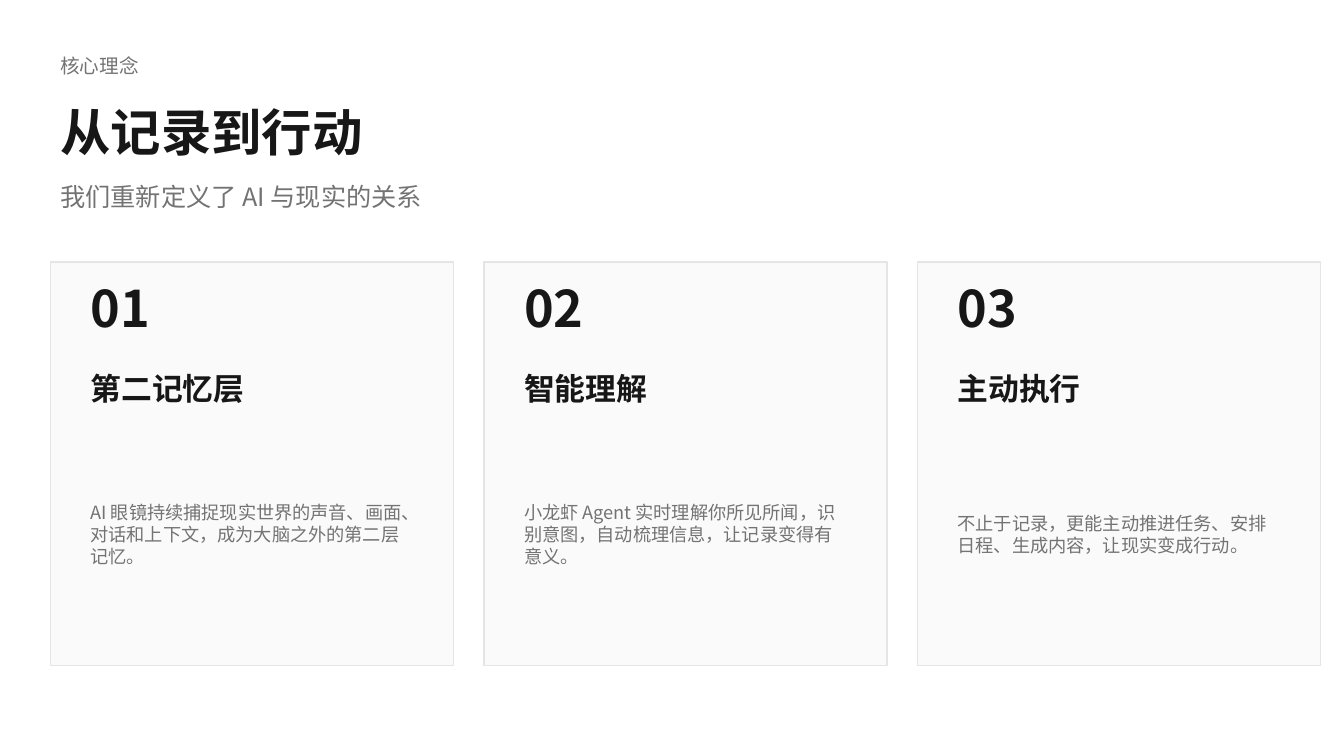
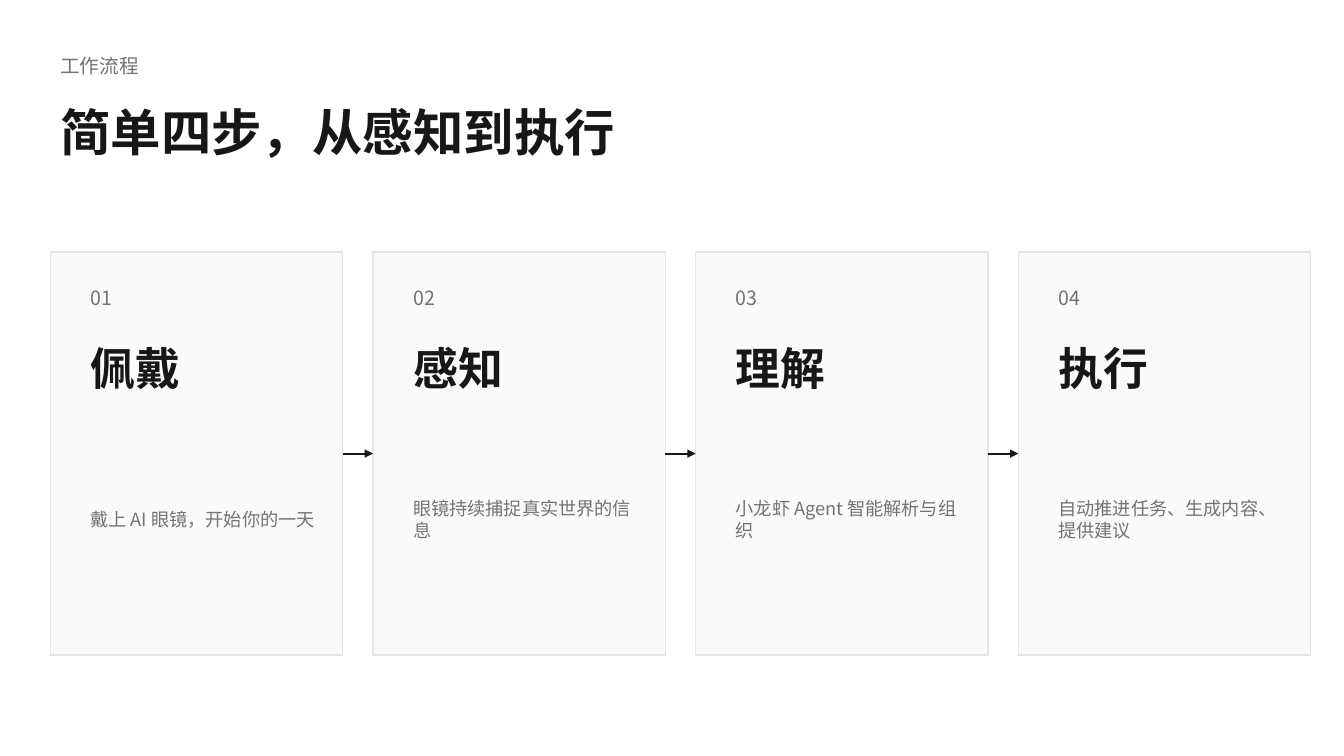
from itertools import pairwise

from lxml import etree
from pptx import Presentation
from pptx.dml.color import RGBColor
from pptx.enum.shapes import MSO_CONNECTOR, MSO_SHAPE
from pptx.enum.text import MSO_ANCHOR
from pptx.oxml.ns import qn
from pptx.util import Inches, Pt

COLORS = {"ink": "171717", "muted": "737373", "card": "FAFAFA", "border": "E5E5E5"}
FONT = "Noto Sans CJK SC"
MARGIN = 0.5
GAP = 0.3
PADDING = 0.3
CARD_HEIGHT = 4
RIGHT_SIDE, LEFT_SIDE = 3, 1

IDEAS = [
    ("01", "第二记忆层", "AI 眼镜持续捕捉现实世界的声音、画面、对话和上下文，成为大脑之外的第二层记忆。"),
    ("02", "智能理解", "小龙虾 Agent 实时理解你所见所闻，识别意图，自动梳理信息，让记录变得有意义。"),
    ("03", "主动执行", "不止于记录，更能主动推进任务、安排日程、生成内容，让现实变成行动。"),
]
STEPS = [
    ("01", "佩戴", "戴上 AI 眼镜，开始你的一天"),
    ("02", "感知", "眼镜持续捕捉真实世界的信息"),
    ("03", "理解", "小龙虾 Agent 智能解析与组织"),
    ("04", "执行", "自动推进任务、生成内容、提供建议"),
]


def add_text(page, left, top, width, height, text, size, color="muted", bold=False):
    box = page.shapes.add_textbox(Inches(left), Inches(top), Inches(width), Inches(height))
    frame = box.text_frame
    frame.word_wrap = True
    frame.vertical_anchor = MSO_ANCHOR.MIDDLE
    frame.text = text
    span = frame.paragraphs[0].runs[0]
    span.font.size = Pt(size)
    span.font.bold = bold
    span.font.name = FONT
    span.font.color.rgb = RGBColor.from_string(COLORS[color])
    # East Asian typeface for the Chinese characters
    etree.SubElement(span.font._element, qn("a:ea"), typeface=FONT)


def add_card(page, left, top, width):
    card = page.shapes.add_shape(
        MSO_SHAPE.RECTANGLE, Inches(left), Inches(top), Inches(width), Inches(CARD_HEIGHT))
    card.shadow.inherit = False
    card.fill.solid()
    card.fill.fore_color.rgb = RGBColor.from_string(COLORS["card"])
    card.line.color.rgb = RGBColor.from_string(COLORS["border"])
    card.line.width = Pt(1)
    return card


def add_arrow(page, start_card, end_card):
    arrow = page.shapes.add_connector(MSO_CONNECTOR.STRAIGHT, 0, 0, 0, 0)
    arrow.begin_connect(start_card, RIGHT_SIDE)
    arrow.end_connect(end_card, LEFT_SIDE)
    arrow.line.color.rgb = RGBColor.from_string(COLORS["ink"])
    arrow.line.width = Pt(1.5)
    # Arrowhead, and no inherited shadow
    etree.SubElement(arrow.line._get_or_add_ln(), qn("a:tailEnd"), type="triangle")
    etree.SubElement(arrow._element.spPr, qn("a:effectLst"))


def add_heading(page, label, title, subtitle=None):
    add_text(page, MARGIN, 0.4, 12, 0.5, label, 14)
    add_text(page, MARGIN, 0.9, 12, 0.8, title, 36, "ink", True)
    if subtitle:
        add_text(page, MARGIN, 1.7, 12, 0.5, subtitle, 18)


def add_idea_card(page, left, top, width, number, name, detail):
    add_card(page, left, top, width)
    inner_left, inner_width = left + PADDING, width - 2 * PADDING
    add_text(page, inner_left, top + 0.2, 1, 0.5, number, 36, "ink", True)
    add_text(page, inner_left, top + 1, inner_width, 0.5, name, 22, "ink", True)
    add_text(page, inner_left, top + 1.7, inner_width, 2, detail, 13)


def add_step_card(page, left, top, width, number, name, detail):
    card = add_card(page, left, top, width)
    inner_left, inner_width = left + PADDING, width - 0.4
    add_text(page, inner_left, top + 0.2, inner_width, 0.5, number, 14)
    add_text(page, inner_left, top + 0.8, inner_width, 0.7, name, 32, "ink", True)
    add_text(page, inner_left, top + 1.9, inner_width, 1.5, detail, 13)
    return card


def add_ideas_slide(deck):
    page = deck.slides.add_slide(deck.slide_layouts[6])
    add_heading(page, "核心理念", "从记录到行动", "我们重新定义了 AI 与现实的关系")
    width = 4
    for index, idea in enumerate(IDEAS):
        add_idea_card(page, MARGIN + index * (width + GAP), 2.6, width, *idea)


def add_steps_slide(deck):
    page = deck.slides.add_slide(deck.slide_layouts[6])
    add_heading(page, "工作流程", "简单四步，从感知到执行")
    width = 2.9
    cards = [
        add_step_card(page, MARGIN + index * (width + GAP), 2.5, width, *step)
        for index, step in enumerate(STEPS)
    ]
    # Arrows across the gaps between neighbouring steps
    for start_card, end_card in pairwise(cards):
        add_arrow(page, start_card, end_card)


def main():
    deck = Presentation()
    deck.slide_width = Inches(13.33)
    deck.slide_height = Inches(7.5)
    add_ideas_slide(deck)
    add_steps_slide(deck)
    deck.save("out.pptx")


if __name__ == "__main__":
    main()
